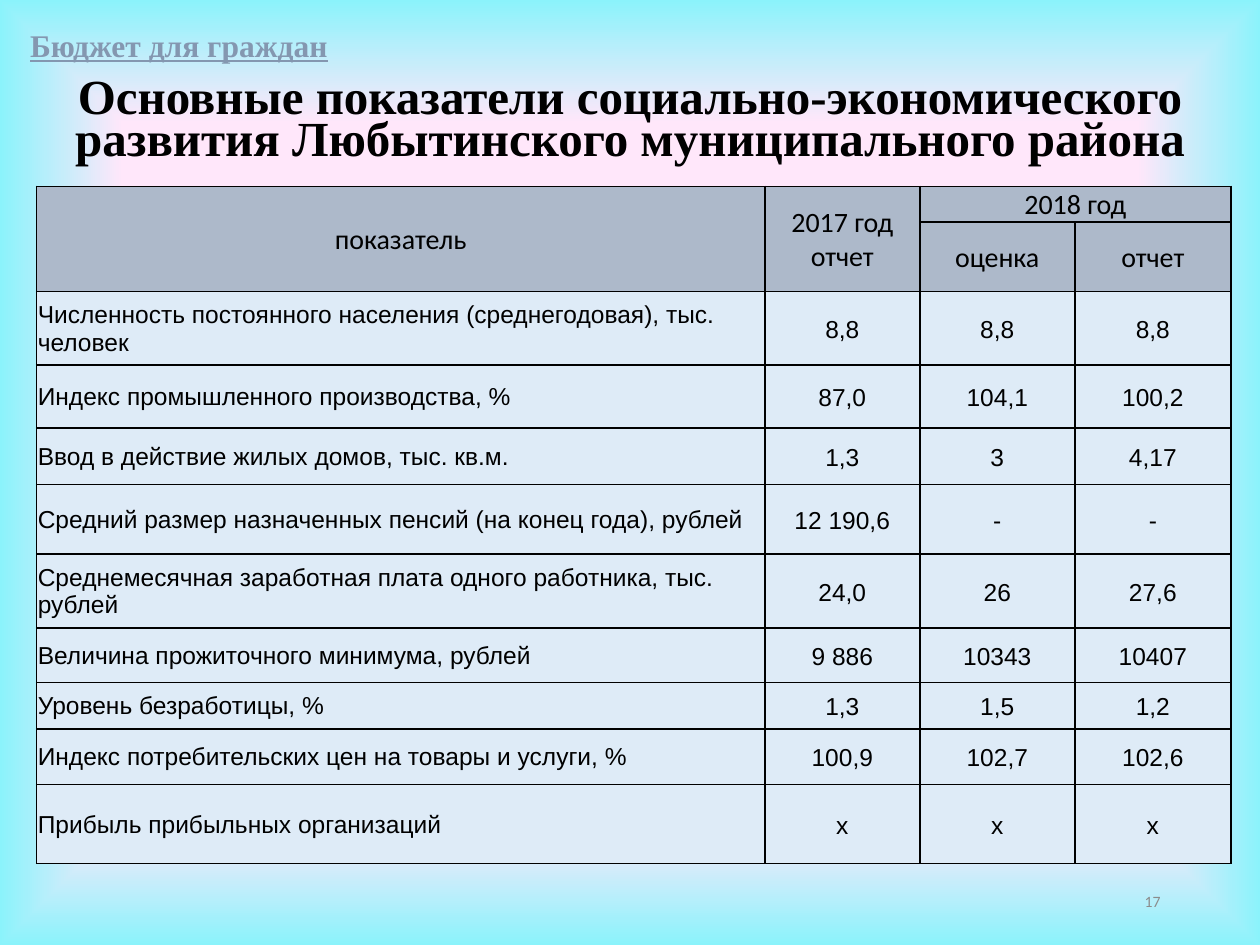
from dataclasses import dataclass

from lxml.etree import SubElement
from pptx import Presentation
from pptx.dml.color import RGBColor
from pptx.enum.text import MSO_ANCHOR as Anchor, MSO_AUTO_SIZE as AutoSize, PP_ALIGN as Align
from pptx.oxml import parse_xml
from pptx.oxml.ns import nsdecls, qn
from pptx.util import Inches, Pt


@dataclass(frozen=True)
class Theme:
    ink: str = "000000"
    label: str = "8497B0"
    number: str = "8C8C8C"
    header: str = "ADB9CA"
    body: str = "DEEBF7"
    background: tuple = ((74, "FFE7FA"), (100, "8BF3FB"), (100, "B5D2EC"), (100, "CEE1F2"))
    serif: str = "Times New Roman"
    sans: str = "Calibri"
    table_font: str = "Arial"
    title_size: int = 28
    label_size: int = 18
    header_size: int = 16
    body_size: int = 14
    number_size: int = 9


THEME = Theme()

COLUMN_WIDTHS = (5.78, 1.23, 1.23, 1.24)
ROW_HEIGHTS = (0.26, 0.3, 0.58, 0.5, 0.45, 0.55, 0.59, 0.43, 0.37, 0.44, 0.63)
HEADER_ROWS = (
    ("показатель", "2017 год отчет", "2018 год", ""),
    ("", "", "оценка", "отчет"),
)
HEADER_MERGES = (((0, 0), (1, 0)), ((0, 1), (1, 1)), ((0, 2), (0, 3)))
INDICATORS = (
    ("Численность постоянного населения (среднегодовая), тыс. человек", "8,8", "8,8", "8,8"),
    ("Индекс промышленного производства, %", "87,0", "104,1", "100,2"),
    ("Ввод в действие жилых домов, тыс. кв.м.", "1,3", "3", "4,17"),
    ("Средний размер назначенных пенсий (на конец года), рублей", "12 190,6", "-", "-"),
    ("Среднемесячная заработная плата одного работника, тыс. рублей", "24,0", "26", "27,6"),
    ("Величина прожиточного минимума, рублей", "9 886", "10343", "10407"),
    ("Уровень безработицы, %", "1,3", "1,5", "1,2"),
    ("Индекс потребительских цен на товары и услуги, %", "100,9", "102,7", "102,6"),
    ("Прибыль прибыльных организаций", "х", "х", "х"),
)


def apply(target, values):
    for name, value in values.items():
        setattr(target, name, value)


def write(paragraph, text, color, font, layout):
    run = paragraph.add_run()
    run.text = text
    run.font.color.rgb = RGBColor.from_string(color)
    apply(run.font, font)
    apply(paragraph, layout)
    return run


def paint_background(slide):
    fill = slide.background.fill
    fill.gradient()
    gradient = slide.background._cSld.find(".//" + qn("a:gradFill"))
    stops = "".join(
        f'<a:gs pos="{position * 1000}"><a:srgbClr val="{color}"/></a:gs>'
        for position, color in THEME.background
    )
    replacement = parse_xml(
        f'<a:gradFill {nsdecls("a")} rotWithShape="1"><a:gsLst>{stops}</a:gsLst>'
        '<a:path path="shape"><a:fillToRect l="50000" t="50000" r="50000" b="50000"/></a:path>'
        "</a:gradFill>"
    )
    gradient.getparent().replace(gradient, replacement)


def add_title(slide, box, text):
    title = slide.shapes.title
    apply(title, dict(zip(("left", "top", "width", "height"), box)))
    apply(title.text_frame, {
        "word_wrap": True, "auto_size": AutoSize.NONE, "vertical_anchor": Anchor.TOP,
    })
    run = write(
        title.text_frame.paragraphs[0], text, THEME.ink,
        {"name": THEME.serif, "size": Pt(THEME.title_size), "bold": True},
        {"alignment": Align.CENTER, "line_spacing": Pt(24)},
    )
    shadow = parse_xml(
        f'<a:effectLst {nsdecls("a")}><a:outerShdw blurRad="38100" dist="38100" dir="2700000">'
        '<a:srgbClr val="000000"><a:alpha val="43000"/></a:srgbClr></a:outerShdw></a:effectLst>'
    )
    run.font.fill._xPr.find(qn("a:solidFill")).addnext(shadow)


def add_label(slide, box, text, color, font, layout, frame_format):
    frame = slide.shapes.add_textbox(*box).text_frame
    apply(frame, frame_format)
    write(frame.paragraphs[0], text, color, font, layout)


def outline_cell(cell):
    properties = cell._tc.get_or_add_tcPr()
    for index, side in enumerate(("lnL", "lnR", "lnT", "lnB")):
        line = SubElement(properties, qn(f"a:{side}"), w=str(Pt(1)))
        fill = SubElement(line, qn("a:solidFill"))
        SubElement(fill, qn("a:srgbClr"), val=THEME.ink)
        properties.insert(index, line)


def format_cell(cell, text, color, font, layout):
    apply(cell, {
        "vertical_anchor": Anchor.MIDDLE, "margin_left": Inches(0.01),
        "margin_right": Inches(0.01), "margin_top": Inches(0.01), "margin_bottom": 0,
    })
    cell.fill.solid()
    cell.fill.fore_color.rgb = RGBColor.from_string(color)
    outline_cell(cell)
    if text:
        write(cell.text_frame.paragraphs[0], text, THEME.ink, font, layout)


def add_indicator_table(slide, box):
    rows = HEADER_ROWS + INDICATORS
    table = slide.shapes.add_table(len(rows), len(COLUMN_WIDTHS), *box).table
    apply(table, {"first_row": False, "horz_banding": False})
    for column, width in zip(table.columns, COLUMN_WIDTHS):
        column.width = Inches(width)
    for row, height in zip(table.rows, ROW_HEIGHTS):
        row.height = Inches(height)

    header_font = {"name": THEME.sans, "size": Pt(THEME.header_size)}
    body_font = {"name": THEME.table_font, "size": Pt(THEME.body_size)}
    centred = {"alignment": Align.CENTER}
    value_layout = {**centred, "line_spacing": 1.07, "space_after": Pt(8)}
    for row_index, values in enumerate(rows):
        for column_index, text in enumerate(values):
            cell = table.cell(row_index, column_index)
            if row_index < len(HEADER_ROWS):
                format_cell(cell, text, THEME.header, header_font, centred)
            else:
                layout = value_layout if column_index else {"alignment": Align.LEFT}
                format_cell(cell, text, THEME.body, body_font, layout)
    for first, last in HEADER_MERGES:
        table.cell(*first).merge(table.cell(*last))


def main():
    presentation = Presentation()
    apply(presentation, {"slide_width": Inches(10), "slide_height": Inches(7.5)})
    slide = presentation.slides.add_slide(presentation.slide_layouts[5])
    paint_background(slide)
    add_indicator_table(slide, (Inches(0.29), Inches(1.48), Inches(9.48), Inches(5.1)))
    add_title(
        slide, (Inches(0), Inches(0.6), Inches(10), Inches(0.8)),
        "Основные показатели социально-экономического развития Любытинского муниципального района",
    )
    add_label(
        slide, (Inches(7.06), Inches(6.95), Inches(2.25), Inches(0.4)), "17", THEME.number,
        {"name": THEME.sans, "size": Pt(THEME.number_size)}, {"alignment": Align.RIGHT},
        {"word_wrap": True, "vertical_anchor": Anchor.MIDDLE},
    )
    add_label(
        slide, (Inches(0.14), Inches(0.16), Inches(2.59), Inches(0.4)), "Бюджет для граждан",
        THEME.label,
        {"name": THEME.serif, "size": Pt(THEME.label_size), "bold": True, "underline": True},
        {"alignment": Align.LEFT},
        {"word_wrap": False, "auto_size": AutoSize.SHAPE_TO_FIT_TEXT},
    )
    presentation.save("out.pptx")


if __name__ == "__main__":
    main()
